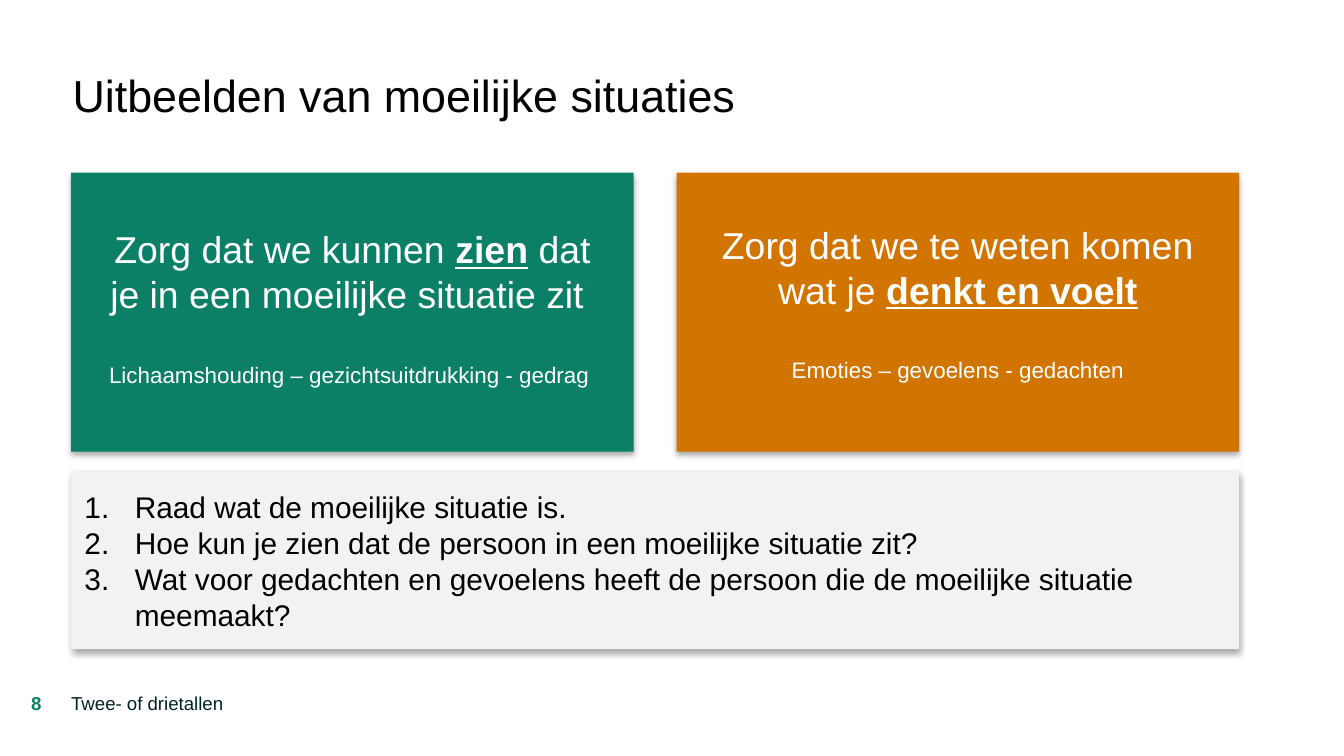
from dataclasses import dataclass

from lxml import etree
from pptx import Presentation
from pptx.dml.color import RGBColor
from pptx.enum.shapes import MSO_SHAPE
from pptx.enum.text import MSO_ANCHOR, MSO_AUTO_SIZE, PP_ALIGN
from pptx.oxml.ns import qn
from pptx.util import Inches, Pt

RECT = MSO_SHAPE.RECTANGLE
TOP, MIDDLE = MSO_ANCHOR.TOP, MSO_ANCHOR.MIDDLE
LEFT, CENTER = PP_ALIGN.LEFT, PP_ALIGN.CENTER
FIXED = MSO_AUTO_SIZE.NONE
TITLE_ONLY = 5


@dataclass(frozen=True)
class Theme:
    font: str = "Arial"
    green: str = "0C8066"
    orange: str = "D27400"
    gray: str = "F2F2F2"
    white: str = "FFFFFF"
    black: str = "000000"
    dark: str = "002328"
    title: int = 24
    lead: int = 20
    list: int = 16
    note: int = 12
    foot: int = 10


@dataclass(frozen=True)
class Area:
    col: float
    row: float
    cols: float
    rows: float


@dataclass(frozen=True)
class Card:
    fill: str
    before: str
    key: str
    after: str
    note: str
    row: float


THEME = Theme()
WIDTH = Inches(10)
HEIGHT = WIDTH * 9 // 16
COL, ROW = WIDTH / 100, HEIGHT / 56.25
EDGE, SPAN, GAP = 5.3, 86.9, 3.2
WIDE = (SPAN - GAP) / 2
PAD = 1.75
INDENT = Inches(0.375)

CARDS = [
    Card(THEME.green, "Zorg dat we kunnen ", "zien",
         " dat je in een moeilijke situatie zit ",
         "Lichaamshouding – gezichtsuitdrukking - gedrag ", 16.35),
    Card(THEME.orange, "Zorg dat we te weten komen wat je ",
         "denkt en voelt", "", "Emoties – gevoelens - gedachten", 16.03),
]
TASKS = [
    "Raad wat de moeilijke situatie is.",
    "Hoe kun je zien dat de persoon in een moeilijke situatie zit?",
    "Wat voor gedachten en gevoelens heeft de persoon die de moeilijke situatie meemaakt?",
]


def place(area: Area) -> tuple[int, int, int, int]:
    return (round(area.col * COL), round(area.row * ROW),
            round(area.cols * COL), round(area.rows * ROW))


def write(para, text: str, *, size: int, color: str, bold: bool = False,
          line: bool = False, align=LEFT) -> None:
    para.alignment = align
    run = para.add_run()
    run.text = text
    font = run.font
    font.name, font.size = THEME.font, Pt(size)
    font.bold, font.underline = bold, line
    font.color.rgb = RGBColor.from_string(color)


def setup(frame, pad: float | None = None, anchor=TOP) -> None:
    frame.word_wrap = True
    frame.auto_size = FIXED
    frame.vertical_anchor = anchor
    if pad is not None:
        frame.margin_left = frame.margin_right = Inches(pad)
        frame.margin_top = frame.margin_bottom = Inches(pad)


def add_box(slide, area: Area, pad: float | None = None):
    frame = slide.shapes.add_textbox(*place(area)).text_frame
    setup(frame, pad)
    return frame


def add_panel(slide, area: Area, fill: str):
    panel = slide.shapes.add_shape(RECT, *place(area))
    panel.fill.solid()
    panel.fill.fore_color.rgb = RGBColor.from_string(fill)
    panel.line.fill.background()
    panel.shadow.inherit = False
    effects = panel.element.spPr.find(qn("a:effectLst"))
    shade = etree.SubElement(effects, qn("a:outerShdw"), blurRad=str(Pt(3.1)),
                             dist=str(Pt(1.8)), dir="5400000", rotWithShape="0")
    color = etree.SubElement(shade, qn("a:srgbClr"), val=THEME.black)
    etree.SubElement(color, qn("a:alpha"), val="35000")
    return panel


def add_card(slide, card: Card, col: float) -> None:
    add_panel(slide, Area(col, 12.85, WIDE, 20.75), card.fill)
    frame = add_box(slide, Area(col + PAD, card.row, WIDE - 2 * PAD, 13.1))
    lead = frame.paragraphs[0]
    for text, key in ((card.before, False), (card.key, True), (card.after, False)):
        if text:
            write(lead, text, size=THEME.lead, color=THEME.white,
                  bold=key, line=key, align=CENTER)
    note = frame.add_paragraph()
    note.space_before = Pt(24)
    write(note, card.note, size=THEME.note, color=THEME.white, align=CENTER)


def add_tasks(slide, tasks: list[str]) -> None:
    frame = add_panel(slide, Area(EDGE, 35.1, SPAN, 13.2), THEME.gray).text_frame
    setup(frame, anchor=MIDDLE)
    for index, task in enumerate(tasks):
        para = frame.add_paragraph() if index else frame.paragraphs[0]
        props = para._p.get_or_add_pPr()
        props.set("marL", str(INDENT))
        props.set("indent", str(-INDENT))
        etree.SubElement(props, qn("a:buFont"), typeface=THEME.font)
        etree.SubElement(props, qn("a:buAutoNum"), type="arabicPeriod")
        write(para, task, size=THEME.list, color=THEME.black)


def add_title(slide, text: str) -> None:
    title = slide.shapes.title
    title.left, title.top, title.width, title.height = place(Area(5.4, 5, 89.8, 6.4))
    setup(title.text_frame, 0)
    write(title.text_frame.paragraphs[0], text, size=THEME.title, color=THEME.black)


def main() -> None:
    deck = Presentation()
    deck.slide_width, deck.slide_height = WIDTH, HEIGHT
    slide = deck.slides.add_slide(deck.slide_layouts[TITLE_ONLY])
    add_title(slide, "Uitbeelden van moeilijke situaties")
    for index, card in enumerate(CARDS):
        add_card(slide, card, EDGE + index * (WIDE + GAP))
    add_tasks(slide, TASKS)
    page = add_box(slide, Area(0.95, 51.5, 3.5, 2), 0)
    write(page.paragraphs[0], "8", size=THEME.foot, color=THEME.green,
          bold=True, align=CENTER)
    foot = add_box(slide, Area(EDGE, 51.5, WIDE, 2.6), 0)
    write(foot.paragraphs[0], "Twee- of drietallen", size=THEME.foot, color=THEME.dark)
    deck.save("out.pptx")


if __name__ == "__main__":
    main()
